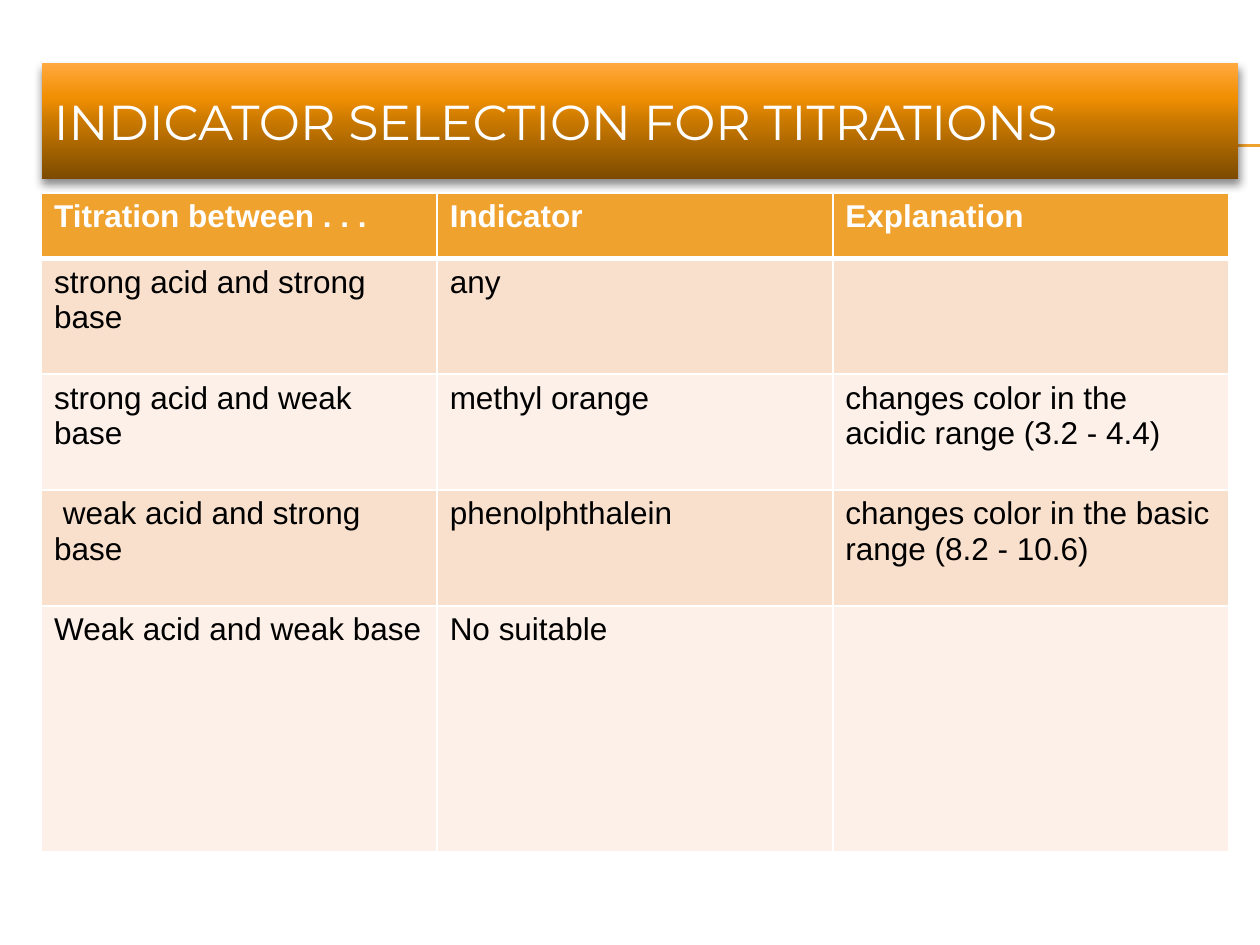
import dataclasses

import lxml.etree
import pptx
import pptx.dml.color
import pptx.enum.shapes
import pptx.enum.text
import pptx.oxml
import pptx.oxml.ns
import pptx.util

Inches = pptx.util.Inches
Pt = pptx.util.Pt
qn = pptx.oxml.ns.qn


@dataclasses.dataclass(frozen=True)
class Theme:
    accent: str = "F0A22E"
    white: str = "FFFFFF"
    black: str = "000000"
    bands: tuple = ("F9E0CD", "FCF0E8")
    banner: tuple = ((0, "7D4B00"), (50, "CA7900"), (70, "F18F03"), (100, "FFA93F"))
    title_font: str = "Montserrat"
    body_font: str = "Arial"
    title_size: int = 28
    body_size: int = 18


def rgb(color):
    return pptx.dml.color.RGBColor.from_string(color)


def add_xml(parent, tag, **attrs):
    return lxml.etree.SubElement(parent, qn(tag), {k: str(v) for k, v in attrs.items()})


class SlideBuilder:
    def __init__(self, slide, theme):
        self.s = slide
        self.theme = theme

    def style(self, p, font, size, color, bold=False):
        p.font.name = font
        p.font.size = Pt(size)
        p.font.bold = bold
        p.font.color.rgb = rgb(color)

    def rule(self, x1, x2, y):
        line = self.s.shapes.add_connector(
            pptx.enum.shapes.MSO_CONNECTOR.STRAIGHT,
            Inches(x1), Inches(y), Inches(x2), Inches(y))
        line.line.color.rgb = rgb(self.theme.accent)
        line.line.width = Pt(0.75)
        add_xml(line._element.spPr, "a:effectLst")

    def banner(self, text, x, y, w, h):
        t = self.theme
        sp = self.s.shapes.add_shape(
            pptx.enum.shapes.MSO_SHAPE.RECTANGLE,
            Inches(x), Inches(y), Inches(w), Inches(h))
        sp.line.fill.background()
        self.gradient(sp, t.banner)
        self.shadow(sp)
        tf = sp.text_frame
        tf.word_wrap = True
        tf.vertical_anchor = pptx.enum.text.MSO_ANCHOR.MIDDLE
        p = tf.paragraphs[0]
        p.text = text
        p.alignment = pptx.enum.text.PP_ALIGN.LEFT
        self.style(p, t.title_font, t.title_size, t.white)

    def gradient(self, sp, stops):
        sp.fill.gradient()
        sp.fill.gradient_angle = 90
        gs_list = sp._element.spPr.find(qn("a:gradFill")).find(qn("a:gsLst"))
        gs_list.clear()
        for pos, color in stops:
            gs = add_xml(gs_list, "a:gs", pos=pos * 1000)
            add_xml(gs, "a:srgbClr", val=color)

    def shadow(self, sp):
        sp.shadow.inherit = False
        effects = sp._element.spPr.find(qn("a:effectLst"))
        outer = add_xml(effects, "a:outerShdw", blurRad=Pt(5), dist=Pt(3),
                        dir=90 * 60000, rotWithShape=0)
        color = add_xml(outer, "a:srgbClr", val=self.theme.black)
        add_xml(color, "a:alpha", val=45000)

    def borders(self, cell, bottom):
        tc_pr = cell._tc.get_or_add_tcPr()
        for side, width in (("L", 1), ("R", 1), ("T", 1), ("B", bottom)):
            ln = add_xml(tc_pr, f"a:ln{side}", w=Pt(width))
            fill = add_xml(ln, "a:solidFill")
            add_xml(fill, "a:srgbClr", val=self.theme.white)

    def table(self, rows, x, y, w, heights):
        t = self.theme
        cols = len(rows[0])
        table = self.s.shapes.add_table(
            len(rows), cols, Inches(x), Inches(y), Inches(w), Inches(sum(heights))).table
        for col in table.columns:
            col.width = Inches(w / cols)
        for i, (texts, height) in enumerate(zip(rows, heights)):
            header = i == 0
            table.rows[i].height = Inches(height)
            for j, text in enumerate(texts):
                cell = table.cell(i, j)
                self.borders(cell, 3 if header else 1)
                cell.fill.solid()
                cell.fill.fore_color.rgb = rgb(t.accent if header else t.bands[(i - 1) % 2])
                p = cell.text_frame.paragraphs[0]
                p.text = text
                self.style(p, t.body_font, t.body_size,
                           t.white if header else t.black, header)


def main():
    prs = pptx.Presentation()
    prs.slide_width = Inches(10)
    prs.slide_height = Inches(7.5)
    s = prs.slides.add_slide(prs.slide_layouts[6])
    builder = SlideBuilder(s, Theme())

    for y in (1.15, 1.16):
        builder.rule(0.56, 10, y)
    builder.banner("INDICATOR SELECTION FOR TITRATIONS", 0.33, 0.5, 9.5, 0.92)
    builder.table(
        [
            ("Titration between . . .", "Indicator", "Explanation"),
            ("strong acid and strong base", "any", ""),
            ("strong acid and weak base", "methyl orange",
             "changes color in the acidic range (3.2 - 4.4)"),
            (" weak acid and strong base", "phenolphthalein",
             "changes color in the basic range (8.2 - 10.6)"),
            ("Weak acid and weak base", "No suitable", ""),
        ],
        0.33, 1.53, 9.42, (0.52, 0.92, 0.92, 0.92, 1.95))
    prs.save("out.pptx")


if __name__ == "__main__":
    main()
